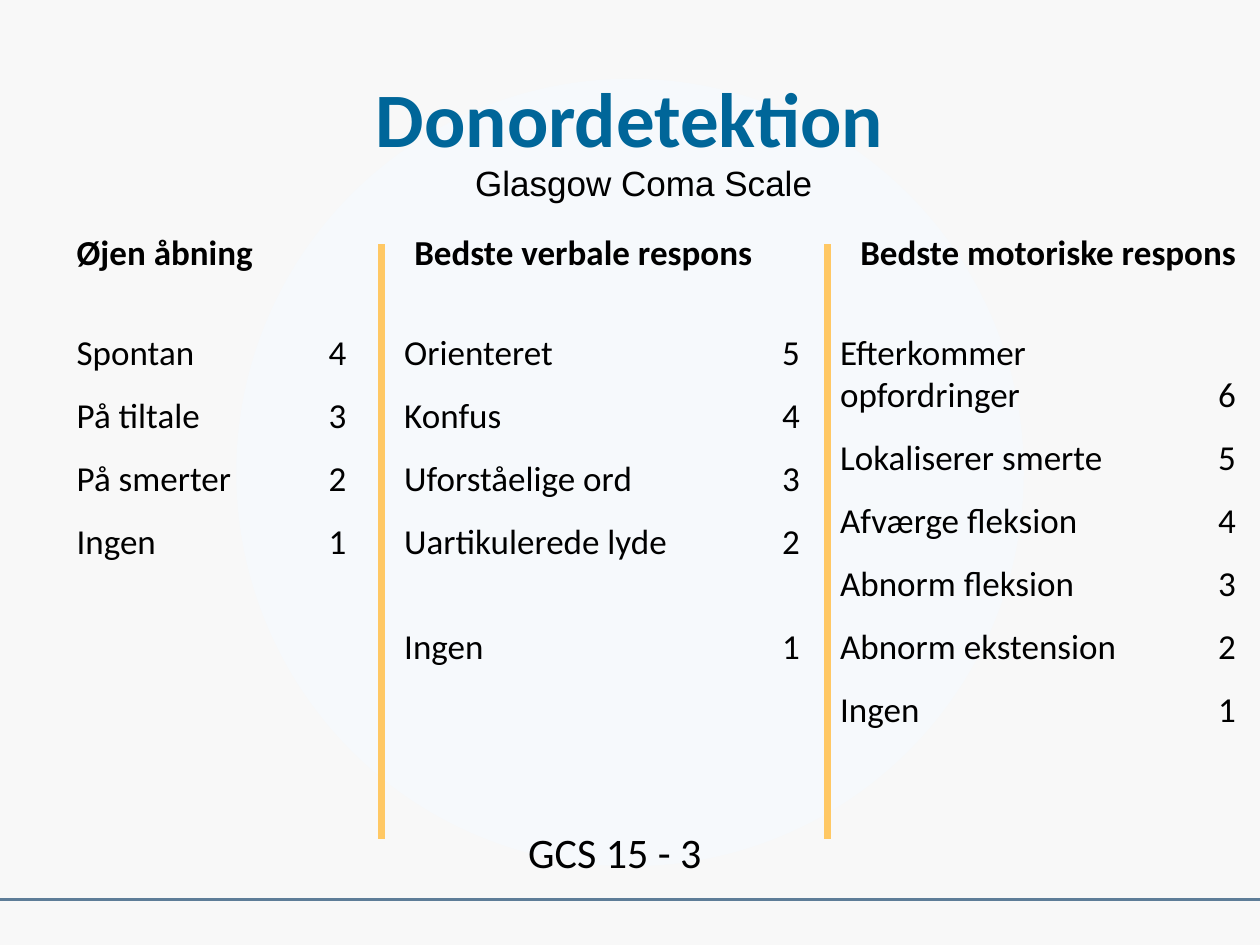
from dataclasses import dataclass

from lxml.etree import SubElement
from pptx import Presentation
from pptx.dml.color import RGBColor
from pptx.enum.shapes import MSO_CONNECTOR
from pptx.enum.text import MSO_ANCHOR, PP_ALIGN
from pptx.oxml.ns import qn
from pptx.util import Inches, Pt


@dataclass(frozen=True)
class Theme:
    ink: str = "000000"
    title: str = "006699"
    divider: str = "FFC864"
    footer: str = "5E7D98"
    centre: str = "F6F9FC"
    edge: str = "F8F8F8"
    body_font: str = "Calibri"
    subtitle_font: str = "Arial"
    title_size: int = 44
    body_size: int = 20
    total_size: int = 24
    row_gap: int = 12
    wide_gap: int = 36


class Deck:
    """Draws styled elements on the current slide."""

    def __init__(self, prs, theme):
        self.theme = theme
        self.s = prs.slides.add_slide(prs.slide_layouts[6])

    def background(self):
        fill = self.s.background.fill
        fill.gradient()
        for stop, color in zip(fill.gradient_stops, (self.theme.centre, self.theme.edge)):
            stop.color.rgb = RGBColor.from_string(color)
        grad = self.s.element.xpath(".//p:bg//a:gradFill")[0]
        grad.remove(grad.find(qn("a:lin")))
        shade = SubElement(grad, qn("a:path"), path="circle")
        SubElement(shade, qn("a:fillToRect"), {side: "50000" for side in "ltrb"})

    def line(self, x1, y1, x2, y2, color, width):
        ends = [Inches(v) for v in (x1, y1, x2, y2)]
        sp = self.s.shapes.add_connector(MSO_CONNECTOR.STRAIGHT, *ends)
        sp.line.color.rgb = RGBColor.from_string(color)
        sp.line.width = Pt(width)
        SubElement(sp.element.spPr, qn("a:effectLst"))

    def text(self, box, lines, color=None, tab=None, gaps=None,
             align=PP_ALIGN.LEFT, anchor=MSO_ANCHOR.TOP, **font):
        sp = self.s.shapes.add_textbox(*[Inches(v) for v in box])
        tf = sp.text_frame
        tf.word_wrap = True
        tf.vertical_anchor = anchor
        fmt = {"name": self.theme.body_font, "size": self.theme.body_size, **font}
        fmt["size"] = Pt(fmt["size"])
        for i, line in enumerate(lines):
            p = tf.add_paragraph() if i else tf.paragraphs[0]
            p.text = line
            p.alignment = align
            if tab:
                tabs = SubElement(p._p.get_or_add_pPr(), qn("a:tabLst"))
                SubElement(tabs, qn("a:tab"), pos=str(Inches(tab)), algn="l")
            if i:
                p.space_before = Pt((gaps or {}).get(i, self.theme.row_gap))
            for r in p.runs:
                for key, value in fmt.items():
                    setattr(r.font, key, value)
                r.font.color.rgb = RGBColor.from_string(color or self.theme.ink)

    def scale(self, head_box, heading, box, labels, tab, gaps=None):
        self.text(head_box, [heading], bold=True)
        top = len(labels)
        rows = [f"{label}\t{top - i}" for i, label in enumerate(labels)]
        self.text(box, rows, tab=tab, gaps=gaps)


def main():
    prs = Presentation()
    prs.slide_width, prs.slide_height = Inches(10), Inches(7.5)
    theme = Theme()
    deck = Deck(prs, theme)
    deck.background()
    deck.line(0, 7.14, 10, 7.14, theme.footer, 1.5)
    deck.text((1.61, 1.23, 7, 0.47), ["Glasgow Coma Scale"],
              align=PP_ALIGN.CENTER, name=theme.subtitle_font)
    deck.scale((0.51, 1.78, 2.52, 0.44), "Øjen åbning", (0.51, 2.57, 2.52, 1.95),
               ["Spontan", "På tiltale", "På smerter", "Ingen"], 2)
    deck.scale((3.19, 1.78, 3.15, 0.44), "Bedste verbale respons", (3.11, 2.57, 3.55, 2.96),
               ["Orienteret", "Konfus", "Uforståelige ord", "Uartikulerede lyde", "Ingen"],
               3, {4: theme.wide_gap})
    deck.scale((6.73, 1.78, 3.27, 0.44), "Bedste motoriske respons", (6.57, 2.57, 3.43, 3.3),
               ["Efterkommer\vopfordringer", "Lokaliserer smerte", "Afværge fleksion",
                "Abnorm fleksion", "Abnorm ekstension", "Ingen"], 3)
    for x in (3.03, 6.57):
        deck.line(x, 1.94, x, 6.66, theme.divider, 4)
    deck.text((3.74, 6.51, 2.28, 0.5), ["GCS 15 - 3"],
              align=PP_ALIGN.CENTER, size=theme.total_size)
    deck.text((0.5, 0.3, 9, 1.25), ["Donordetektion"], theme.title, bold=True,
              align=PP_ALIGN.CENTER, anchor=MSO_ANCHOR.MIDDLE, size=theme.title_size)
    prs.save("out.pptx")


if __name__ == "__main__":
    main()
